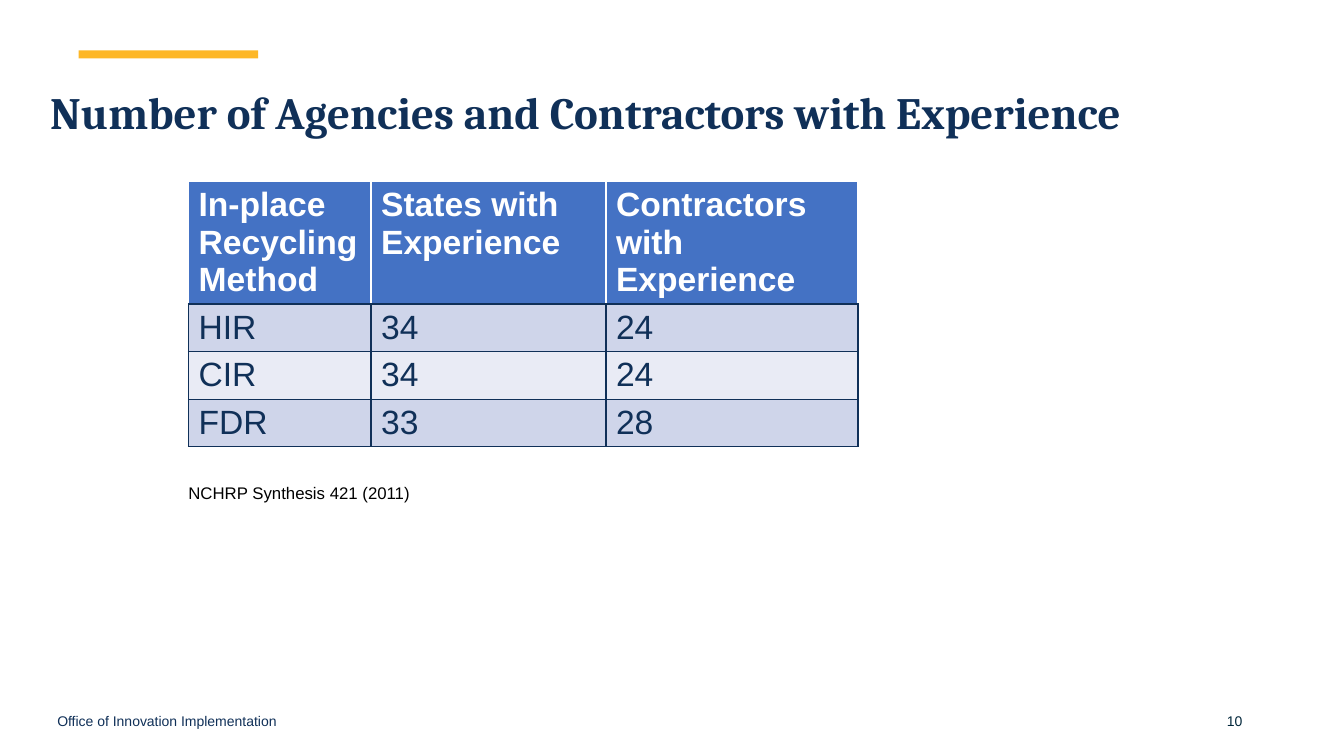
from dataclasses import dataclass
from lxml.etree import SubElement
from pptx import Presentation
from pptx.dml.color import RGBColor
from pptx.enum.shapes import MSO_SHAPE
from pptx.enum.text import MSO_ANCHOR, PP_ALIGN
from pptx.oxml.ns import qn
from pptx.slide import Slide
from pptx.table import _Cell
from pptx.text.text import _Paragraph
from pptx.util import Emu, Pt


@dataclass(frozen=True)
class Theme:
    navy: str = "103058"
    ink: str = "00263A"
    gold: str = "FDB727"
    blue: str = "4472C4"
    white: str = "FFFFFF"
    black: str = "000000"
    bands: tuple[str, str] = ("CFD5EA", "E9EBF5")
    head: str = "Cambria"
    body: str = "Arial"
    title: int = 32
    table: int = 24
    note: int = 12
    small: int = 10


@dataclass(frozen=True)
class Box:
    left: int
    top: int
    width: int
    height: int


@dataclass(frozen=True)
class Label:
    text: str
    box: Box
    size: int
    color: str
    font: str
    bold: bool = False
    align: PP_ALIGN = PP_ALIGN.LEFT
    anchor: MSO_ANCHOR = MSO_ANCHOR.MIDDLE
    spacing: float = 1.0


THEME = Theme()
LABELS = [
    Label("Office of Innovation Implementation", Box(47, 696, 290, 39),
          THEME.small, THEME.navy, THEME.body),
    Label("Number of Agencies and Contractors with Experience", Box(40, 82, 1293, 65),
          THEME.title, THEME.navy, THEME.head, bold=True, spacing=0.9),
    Label("10", Box(1174, 695, 68, 40),
          THEME.small, THEME.ink, THEME.body, align=PP_ALIGN.RIGHT),
    Label("NCHRP Synthesis 421 (2011)", Box(177, 474, 728, 30),
          THEME.note, THEME.black, THEME.body, anchor=MSO_ANCHOR.TOP),
]
GRID = Box(187, 180, 664, 280)
WIDTHS = [181, 233, 250]
HEIGHTS = [100, 41, 41, 41]
ROWS = [
    ["In-place Recycling Method", "States with Experience", "Contractors with Experience"],
    ["HIR", "34", "24"],
    ["CIR", "34", "24"],
    ["FDR", "33", "28"],
]


def px(count: int) -> Emu:
    return Emu(count * 9144)


def place(box: Box) -> tuple[Emu, Emu, Emu, Emu]:
    return px(box.left), px(box.top), px(box.width), px(box.height)


def style(para: _Paragraph, size: int, color: str, font: str, bold: bool) -> None:
    for run in para.runs:
        run.font.size = Pt(size)
        run.font.name = font
        run.font.bold = bold
        run.font.color.rgb = RGBColor.from_string(color)


def draw_bar(slide: Slide, box: Box, color: str) -> None:
    bar = slide.shapes.add_shape(MSO_SHAPE.RECTANGLE, *place(box))
    bar.shadow.inherit = False
    bar.fill.solid()
    bar.fill.fore_color.rgb = RGBColor.from_string(color)
    bar.line.fill.background()


def draw_label(slide: Slide, label: Label) -> None:
    frame = slide.shapes.add_textbox(*place(label.box)).text_frame
    frame.word_wrap = True
    frame.vertical_anchor = label.anchor
    frame.text = label.text
    para = frame.paragraphs[0]
    para.alignment = label.align
    para.line_spacing = label.spacing
    style(para, label.size, label.color, label.font, label.bold)


def edge(cell: _Cell, side: str, color: str) -> None:
    line = SubElement(cell._tc.get_or_add_tcPr(), qn(f"a:ln{side}"), w=str(Pt(1)))
    fill = SubElement(line, qn("a:solidFill"))
    SubElement(fill, qn("a:srgbClr"), val=color)


def draw_cell(cell: _Cell, text: str, row: int) -> None:
    head = row == 0
    for side in "LRTB":
        edge(cell, side, THEME.white if head and side != "B" else THEME.navy)
    cell.fill.solid()
    shade = THEME.blue if head else THEME.bands[(row - 1) % 2]
    cell.fill.fore_color.rgb = RGBColor.from_string(shade)
    cell.text_frame.text = text
    color = THEME.white if head else THEME.navy
    style(cell.text_frame.paragraphs[0], THEME.table, color, THEME.body, head)


def draw_table(slide: Slide) -> None:
    frame = slide.shapes.add_table(len(ROWS), len(WIDTHS), *place(GRID))
    table = frame.table
    for column, width in zip(table.columns, WIDTHS):
        column.width = px(width)
    for row, height in zip(table.rows, HEIGHTS):
        row.height = px(height)
    frame.height = px(GRID.height)
    for r, texts in enumerate(ROWS):
        for c, text in enumerate(texts):
            draw_cell(table.cell(r, c), text, r)


def main() -> None:
    deck = Presentation()
    deck.slide_width, deck.slide_height = px(1333), px(750)
    slide = deck.slides.add_slide(deck.slide_layouts[6])
    draw_bar(slide, Box(78, 50, 178, 8), THEME.gold)
    draw_table(slide)
    for label in LABELS:
        draw_label(slide, label)
    deck.save("out.pptx")


if __name__ == "__main__":
    main()
